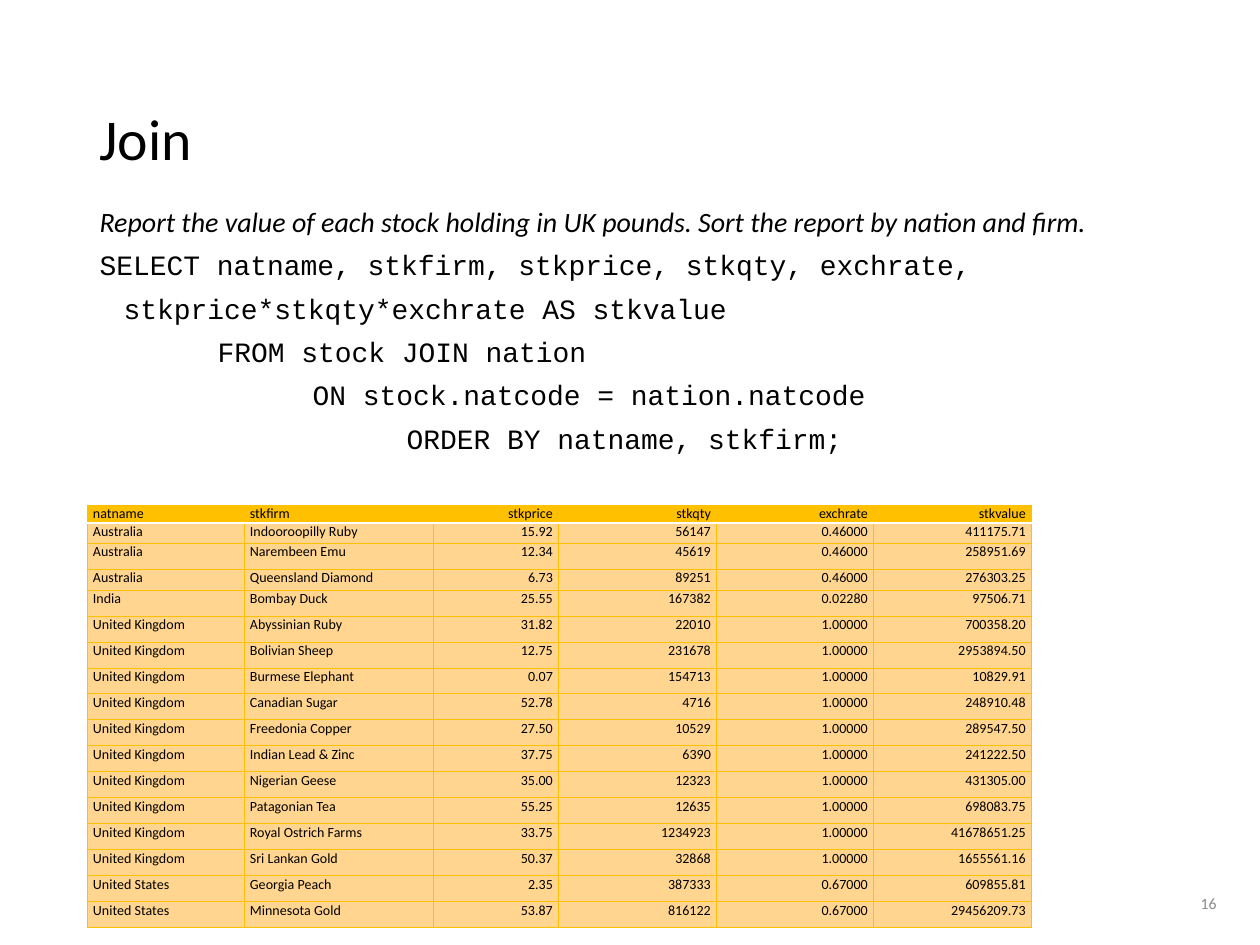
from lxml import etree
from pptx import Presentation
from pptx.dml.color import RGBColor
from pptx.enum.text import MSO_ANCHOR, MSO_AUTO_SIZE, PP_ALIGN
from pptx.oxml.ns import qn
from pptx.util import Pt

PX = 914400 // 126
LEFT, RIGHT = PP_ALIGN.LEFT, PP_ALIGN.RIGHT
TOP, MIDDLE = MSO_ANCHOR.TOP, MSO_ANCHOR.MIDDLE
FIXED = MSO_AUTO_SIZE.NONE

BLACK = RGBColor(0, 0, 0)
GREY = RGBColor(0x8C, 0x8C, 0x8C)
WHITE = RGBColor(0xFF, 0xFF, 0xFF)
GOLD = RGBColor(0xFF, 0xC0, 0x00)
SAND = RGBColor(0xFF, 0xD5, 0x90)
SANS, MONO = "Calibri", "Courier New"

EDGE = 87
TASK = ("Report the value of each stock holding in UK pounds. "
        "Sort the report by nation and firm.")
# Each line of the query with its indent in px
QUERY = [
    ("SELECT natname, stkfirm, stkprice, stkqty, exchrate,", 0),
    ("stkprice*stkqty*exchrate AS stkvalue", 24),
    ("FROM stock JOIN nation", 118),
    ("ON stock.natcode = nation.natcode", 213),
    ("ORDER BY natname, stkfirm;", 307),
]

HEAD = ["natname", "stkfirm", "stkprice", "stkqty", "exchrate", "stkvalue"]
# Each nation with its exchange rate and its firms
STOCK = [
    ("Australia", "0.46000", [
        ("Indooroopilly Ruby", "15.92", "56147", "411175.71"),
        ("Narembeen Emu", "12.34", "45619", "258951.69"),
        ("Queensland Diamond", "6.73", "89251", "276303.25")]),
    ("India", "0.02280", [
        ("Bombay Duck", "25.55", "167382", "97506.71")]),
    ("United Kingdom", "1.00000", [
        ("Abyssinian Ruby", "31.82", "22010", "700358.20"),
        ("Bolivian Sheep", "12.75", "231678", "2953894.50"),
        ("Burmese Elephant", "0.07", "154713", "10829.91"),
        ("Canadian Sugar", "52.78", "4716", "248910.48"),
        ("Freedonia Copper", "27.50", "10529", "289547.50"),
        ("Indian Lead & Zinc", "37.75", "6390", "241222.50"),
        ("Nigerian Geese", "35.00", "12323", "431305.00"),
        ("Patagonian Tea", "55.25", "12635", "698083.75"),
        ("Royal Ostrich Farms", "33.75", "1234923", "41678651.25"),
        ("Sri Lankan Gold", "50.37", "32868", "1655561.16")]),
    ("United States", "0.67000", [
        ("Georgia Peach", "2.35", "387333", "609855.81"),
        ("Minnesota Gold", "53.87", "816122", "29456209.73")]),
]
ROWS = [HEAD] + [[nation, firm, price, qty, rate, value]
                 for nation, rate, firms in STOCK
                 for firm, price, qty, value in firms]
WIDTHS = [157, 189, 126, 158, 157, 158]
HEIGHTS = [18, 20, 26, 21] + [26] * (len(ROWS) - 4)


def box(*sizes):
    return [size * PX for size in sizes]


def place(shape, *sizes):
    shape.left, shape.top, shape.width, shape.height = box(*sizes)


def write(para, text, size, font=SANS, color=BLACK, align=LEFT,
          italic=False, line=None, before=0, indent=None):
    """Fill one paragraph; an indent in px also turns its bullet off."""
    para.alignment = align
    para.line_spacing = line
    para.space_before = Pt(before)
    if indent is not None:
        props = para._p.get_or_add_pPr()
        props.set("marL", str(indent * PX))
        props.set("indent", "0")
        etree.SubElement(props, qn("a:buNone"))
    run = para.add_run()
    run.text = text
    face = run.font
    face.name, face.size = font, Pt(size)
    face.bold, face.italic = False, italic
    face.color.rgb = color


def add_title(slide):
    title = slide.shapes.title
    place(title, EDGE, 50, 1086, 183)
    frame = title.text_frame
    frame.auto_size, frame.vertical_anchor = FIXED, MIDDLE
    write(frame.paragraphs[0], "Join", 33, line=0.9)


def add_body(slide):
    body = slide.placeholders[1]
    place(body, EDGE, 202, 1071, 296)
    frame = body.text_frame
    frame.auto_size, frame.vertical_anchor = FIXED, TOP
    write(frame.paragraphs[0], TASK, 16, italic=True,
          line=0.9, before=7.5, indent=0)
    for text, indent in QUERY:
        write(frame.add_paragraph(), text, 16, font=MONO,
              line=0.9, before=7.5, indent=indent)


def add_number(slide):
    frame = slide.shapes.add_textbox(*box(945, 878, 284, 50)).text_frame
    frame.word_wrap, frame.vertical_anchor = True, MIDDLE
    write(frame.paragraphs[0], "16", 9, color=GREY, align=RIGHT)


def rule(cell, side, color, width):
    """Draw one border of a cell; call before the cell is filled."""
    line = etree.SubElement(cell._tc.get_or_add_tcPr(), qn("a:ln" + side),
                            w=str(Pt(width)))
    fill = etree.SubElement(line, qn("a:solidFill"))
    etree.SubElement(fill, qn("a:srgbClr"), val=str(color))


def style(cell, row):
    cell.margin_left = cell.margin_right = 6 * PX
    cell.margin_top = cell.margin_bottom = 0
    cell.vertical_anchor = TOP
    white = {0: "B", 1: "T"}.get(row)
    for side in "LRTB":
        if side == white:
            rule(cell, side, WHITE, 1)
        else:
            rule(cell, side, GOLD, 0.5)
    cell.fill.solid()
    cell.fill.fore_color.rgb = SAND if row else GOLD


def add_stock(slide):
    table = slide.shapes.add_table(
        len(ROWS), len(HEAD),
        *box(EDGE, 505, sum(WIDTHS), sum(HEIGHTS))).table
    table.horz_banding = False
    for col, width in zip(table.columns, WIDTHS):
        col.width = width * PX
    for row, height in zip(table.rows, HEIGHTS):
        row.height = height * PX
    for r, texts in enumerate(ROWS):
        for c, text in enumerate(texts):
            cell = table.cell(r, c)
            style(cell, r)
            write(cell.text_frame.paragraphs[0], text, 8,
                  align=RIGHT if c > 1 else LEFT)


def main():
    deck = Presentation()
    deck.slide_width, deck.slide_height = box(1260, 945)
    slide = deck.slides.add_slide(deck.slide_layouts[1])
    add_title(slide)
    add_body(slide)
    add_number(slide)
    add_stock(slide)
    deck.save("out.pptx")


if __name__ == "__main__":
    main()
